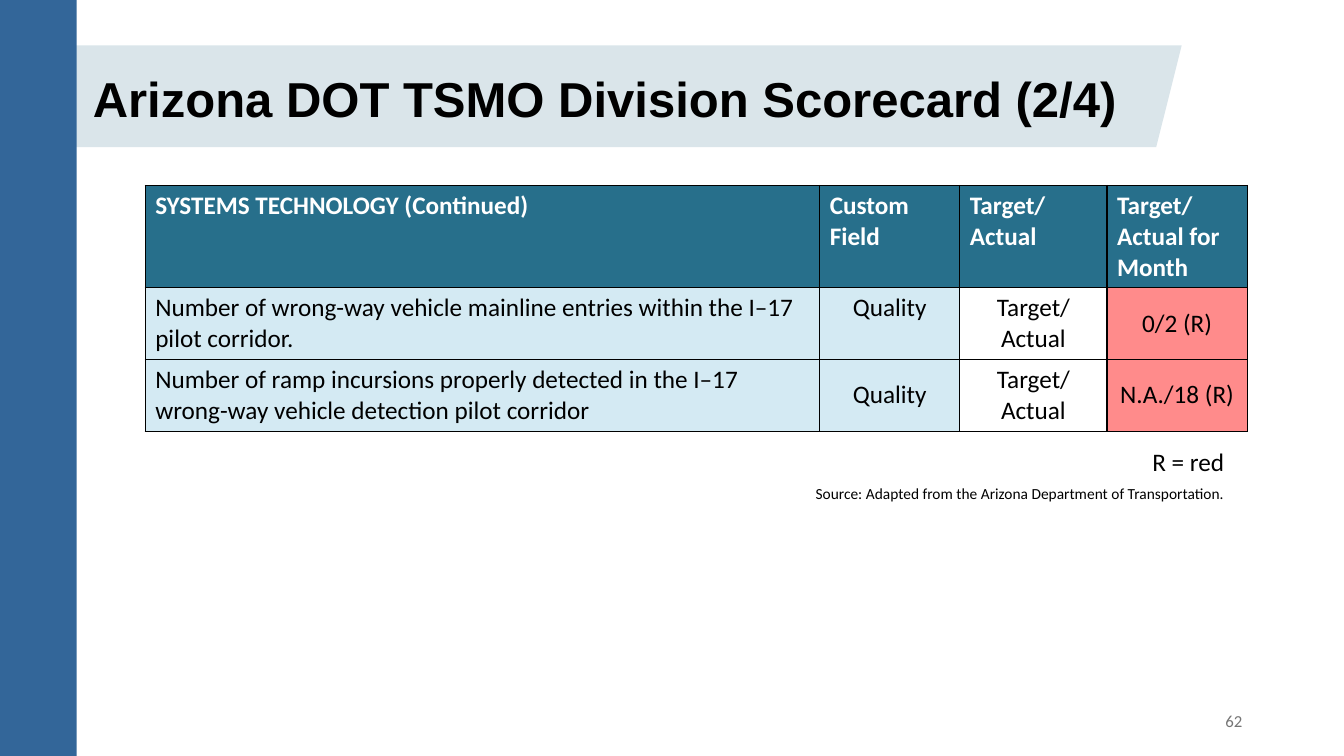
import dataclasses

import pptx
import pptx.dml.color
import pptx.enum.shapes
import pptx.enum.text
import pptx.oxml
import pptx.oxml.ns
import pptx.util

Inches = pptx.util.Inches
Shape = pptx.enum.shapes.MSO_SHAPE
Align = pptx.enum.text.PP_ALIGN
Anchor = pptx.enum.text.MSO_ANCHOR


@dataclasses.dataclass(frozen=True)
class Theme:
    head: str = "Arial"
    body: str = "Calibri"
    black: str = "000000"
    white: str = "FFFFFF"
    gray: str = "757575"
    blue: str = "336699"
    band: str = "DAE5EA"
    teal: str = "276F8B"
    pale: str = "D4EAF3"
    red: str = "FF8B8B"
    title: int = 35
    text: int = 18
    page: int = 12
    note: int = 11


THEME = Theme()
COLS = [6.69, 1.39, 1.46, 1.39]
ROWS = [1.01, 0.71, 0.71]
HEADS = ["SYSTEMS TECHNOLOGY (Continued)", "Custom Field",
         "Target/ Actual", "Target/ Actual for Month"]
ITEMS = [
    ["Number of wrong-way vehicle mainline entries within the I–17 pilot corridor.",
     "Quality", "Target/ Actual", "0/2 (R)"],
    ["Number of ramp incursions properly detected in the I–17 wrong-way "
     "vehicle detection pilot corridor",
     "Quality", "Target/ Actual", "N.A./18 (R)"],
]


def rgb(color):
    return pptx.dml.color.RGBColor.from_string(color)


def write(frame, text, size, color=THEME.black, font=THEME.body,
          bold=False, align=Align.LEFT):
    """Put one formatted run in the frame and return its paragraph."""
    frame.word_wrap = True
    para = frame.paragraphs[0]
    para.alignment = align
    run = para.add_run()
    run.text = text
    run.font.name = font
    run.font.size = pptx.util.Pt(size)
    run.font.bold = bold
    run.font.color.rgb = rgb(color)
    return para


def panel(slide, kind, box, color):
    shape = slide.shapes.add_shape(kind, *map(Inches, box))
    shape.shadow.inherit = False
    shape.fill.solid()
    shape.fill.fore_color.rgb = rgb(color)
    shape.line.fill.background()


def label(slide, box, text, size, color=THEME.black, anchor=Anchor.TOP):
    frame = slide.shapes.add_textbox(*map(Inches, box)).text_frame
    frame.vertical_anchor = anchor
    write(frame, text, size, color, align=Align.RIGHT)


def header(slide, box):
    """Draw the slanted band and set the title over it."""
    left, top, width, height = box
    panel(slide, Shape.PARALLELOGRAM, box, THEME.band)
    title = slide.shapes.title
    title.left, title.top = Inches(left + 0.58), Inches(top + 0.22)
    title.width, title.height = Inches(width - 0.91), Inches(height - 0.34)
    frame = title.text_frame
    frame.auto_size = pptx.enum.text.MSO_AUTO_SIZE.NONE
    frame.vertical_anchor = Anchor.MIDDLE
    para = write(frame, "Arizona DOT TSMO Division Scorecard (2/4)",
                 THEME.title, font=THEME.head, bold=True)
    para.line_spacing = 0.9
    # Bring the title in front of the band
    title.element.getparent().append(title.element)


def border(cell):
    """Rule all four sides; the lines must come before the fill."""
    props = cell._tc.get_or_add_tcPr()
    space = pptx.oxml.ns.nsdecls("a")
    for spot, side in enumerate(("lnL", "lnR", "lnT", "lnB")):
        props.insert(spot, pptx.oxml.parse_xml(
            f'<a:{side} {space} w="12700"><a:solidFill>'
            f'<a:srgbClr val="{THEME.black}"/></a:solidFill></a:{side}>'))


def score(slide, box):
    """Build the scorecard table."""
    table = slide.shapes.add_table(
        len(ROWS), len(COLS), *map(Inches, box)).table
    for col, width in zip(table.columns, COLS):
        col.width = Inches(width)
    for row, height in zip(table.rows, ROWS):
        row.height = Inches(height)
    fills = [THEME.pale, THEME.pale, THEME.white, THEME.red]
    for r, texts in enumerate([HEADS] + ITEMS):
        for c, text in enumerate(texts):
            cell = table.cell(r, c)
            head = r == 0
            cell.fill.solid()
            cell.fill.fore_color.rgb = rgb(THEME.teal if head else fills[c])
            high = head or (r, c) == (1, 1)
            cell.vertical_anchor = Anchor.TOP if high else Anchor.MIDDLE
            write(cell.text_frame, text, THEME.text,
                  THEME.white if head else THEME.black, bold=head,
                  align=Align.LEFT if head or c == 0 else Align.CENTER)
            border(cell)


def notes(slide, box):
    """Set the key and the source line, flush right in the box."""
    left, top, width, height = box
    label(slide, (left, top, width, 0.4), "R = red", THEME.text)
    label(slide, (left, top + height - 0.29, width, 0.29),
          "Source: Adapted from the Arizona Department of Transportation.",
          THEME.note)


def main():
    deck = pptx.Presentation()
    deck.slide_width, deck.slide_height = Inches(13.33), Inches(7.5)
    slide = deck.slides.add_slide(deck.slide_layouts.get_by_name("Title Only"))
    header(slide, (0.24, 0.45, 11.48, 1.01))
    panel(slide, Shape.RECTANGLE, (0, 0, 0.76, 7.5), THEME.blue)
    score(slide, (1.44, 1.84, sum(COLS), sum(ROWS)))
    notes(slide, (7.79, 4.38, 4.45, 0.66))
    label(slide, (9.42, 6.95, 3, 0.4), "62", THEME.page, THEME.gray,
          Anchor.MIDDLE)
    deck.save("out.pptx")


if __name__ == "__main__":
    main()
